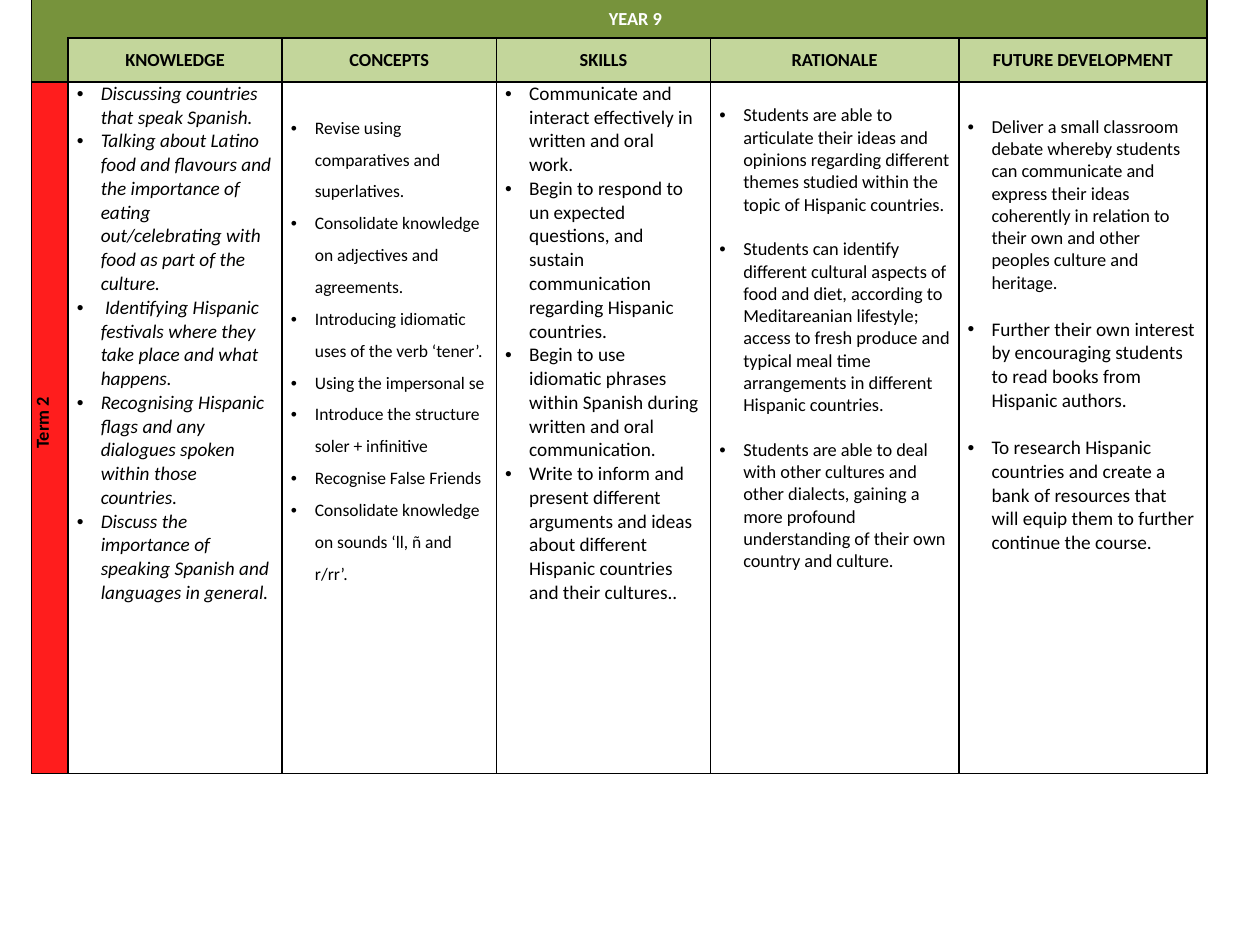
from dataclasses import dataclass
from lxml.etree import SubElement
from pptx import Presentation
from pptx.dml.color import RGBColor
from pptx.enum.text import MSO_ANCHOR, PP_ALIGN
from pptx.oxml.ns import qn
from pptx.util import Inches, Pt


@dataclass(frozen=True)
class Theme:
    font: str = "Calibri"
    dark: str = "77933C"
    light: str = "C3D69B"
    red: str = "FF1D1D"
    white: str = "FFFFFF"
    black: str = "000000"
    head: float = 10.5
    large: float = 11
    mid: float = 10.5
    small: float = 10
    line: float = 1


@dataclass(frozen=True)
class Topic:
    head: str
    items: tuple
    size: float
    top: float = 0
    gap: float = 0
    space: float = 1
    slant: bool = False


THEME = Theme()
WIDTHS = (0.29, 1.7, 1.7, 1.7, 1.97, 1.97)
HEIGHTS = (0.3, 0.35, 5.49)
TOPICS = (
    Topic("KNOWLEDGE", (
        "Discussing countries that speak Spanish.",
        "Talking about Latino food and flavours and the importance of eating "
        "out/celebrating with food as part of the culture.",
        " Identifying Hispanic festivals where they take place and what happens.",
        "Recognising Hispanic flags and any dialogues spoken within those countries.",
        "Discuss the importance of speaking Spanish and languages in general.",
    ), THEME.large, slant=True),
    Topic("CONCEPTS", (
        "Revise using comparatives and superlatives.",
        "Consolidate knowledge on adjectives and agreements.",
        "Introducing idiomatic uses of the verb ‘tener’.",
        "Using the impersonal se",
        "Introduce the structure soler + infinitive",
        "Recognise False Friends",
        "Consolidate knowledge on sounds ‘ll, ñ and r/rr’.",
    ), THEME.small, top=0.2, space=1.5),
    Topic("SKILLS", (
        "Communicate and interact effectively in written and oral work.",
        "Begin to respond to un expected questions, and sustain communication "
        "regarding Hispanic countries.",
        "Begin to use idiomatic phrases within Spanish during written and oral "
        "communication.",
        "Write to inform and present different arguments and ideas about "
        "different Hispanic countries and their cultures..",
    ), THEME.large),
    Topic("RATIONALE", (
        "Students are able to articulate their ideas and opinions regarding "
        "different themes studied within the topic of Hispanic countries.",
        "Students can identify different cultural aspects of food and diet, "
        "according to Meditareanian lifestyle; access to fresh produce and "
        "typical meal time arrangements in different Hispanic countries.",
        "Students are able to deal with other cultures and other dialects, "
        "gaining a more profound understanding of their own country and culture.",
    ), THEME.mid, top=0.18, gap=12.8),
    Topic("FUTURE DEVELOPMENT", (
        ("Deliver a small classroom debate whereby students can communicate and "
         "express their ideas coherently in relation to their own and other "
         "peoples culture and heritage.", THEME.mid),
        "Further their own interest by encouraging students to read books from "
        "Hispanic authors.",
        "To research Hispanic countries and create a bank of resources that "
        "will equip them to further continue the course.",
    ), THEME.large, top=0.27, gap=13.4),
)


def add_run(para, text, size, color=THEME.black, bold=False, slant=False):
    run = para.add_run()
    run.text = text
    font = run.font
    font.name, font.size = THEME.font, Pt(size)
    font.bold, font.italic = bold, slant
    font.color.rgb = RGBColor.from_string(color)


def style_cell(cell, fill, sides="LRTB", top=0):
    cell.margin_left = cell.margin_right = Inches(0.07)
    cell.margin_top, cell.margin_bottom = Inches(top), 0
    props = cell._tc.get_or_add_tcPr()
    for side in "LRTB":
        line = SubElement(props, qn(f"a:ln{side}"), w=str(Pt(THEME.line)))
        if side in sides:
            paint = SubElement(line, qn("a:solidFill"))
            SubElement(paint, qn("a:srgbClr"), val=THEME.black)
        else:
            SubElement(line, qn("a:noFill"))
    cell.fill.solid()
    cell.fill.fore_color.rgb = RGBColor.from_string(fill)


def add_label(cell, text, color=THEME.black):
    cell.vertical_anchor = MSO_ANCHOR.MIDDLE
    para = cell.text_frame.paragraphs[0]
    para.alignment = PP_ALIGN.CENTER
    add_run(para, text, THEME.head, color, bold=True)
    return para


def add_bullet(para):
    props = para._p.get_or_add_pPr()
    props.set("marL", str(Inches(0.19)))
    props.set("indent", str(-Inches(0.19)))
    SubElement(props, qn("a:buFont"), typeface="Arial")
    SubElement(props, qn("a:buChar"), char="•")


def add_list(cell, topic):
    frame = cell.text_frame
    for index, item in enumerate(topic.items):
        text, size = item if isinstance(item, tuple) else (item, topic.size)
        para = frame.add_paragraph() if index else frame.paragraphs[0]
        para.line_spacing = topic.space
        para.space_before = Pt(topic.gap if index else 0)
        add_bullet(para)
        add_run(para, text, size, slant=topic.slant)


def add_grid(slide):
    shape = slide.shapes.add_table(
        len(HEIGHTS), len(WIDTHS), Inches(0.25), 0,
        Inches(sum(WIDTHS)), Inches(sum(HEIGHTS)))
    table = shape.table
    table.first_row = table.horz_banding = False
    for column, width in zip(table.columns, WIDTHS):
        column.width = Inches(width)
    for row, height in zip(table.rows, HEIGHTS):
        row.height = Inches(height)
    return table


def add_year(table):
    corner, year = table.cell(0, 0), table.cell(0, 1)
    corner.merge(table.cell(1, 0))
    year.merge(table.cell(0, len(WIDTHS) - 1))
    style_cell(corner, THEME.dark, "LB")
    style_cell(year, THEME.dark, "RB")
    add_label(year, "YEAR 9 ", THEME.white)


def add_term(cell):
    style_cell(cell, THEME.red)
    para = add_label(cell, "Term 2")
    para._p.get_or_add_pPr().set("marL", str(Inches(0.08)))
    cell._tc.get_or_add_tcPr().set("vert", "vert270")


def main():
    deck = Presentation()
    deck.slide_width, deck.slide_height = Inches(10), Inches(7.5)
    slide = deck.slides.add_slide(deck.slide_layouts[6])
    table = add_grid(slide)
    add_year(table)
    add_term(table.cell(2, 0))
    for column, topic in enumerate(TOPICS, 1):
        head, body = table.cell(1, column), table.cell(2, column)
        style_cell(head, THEME.light)
        add_label(head, topic.head)
        style_cell(body, THEME.white, top=topic.top)
        add_list(body, topic)
    deck.save("out.pptx")


if __name__ == "__main__":
    main()
